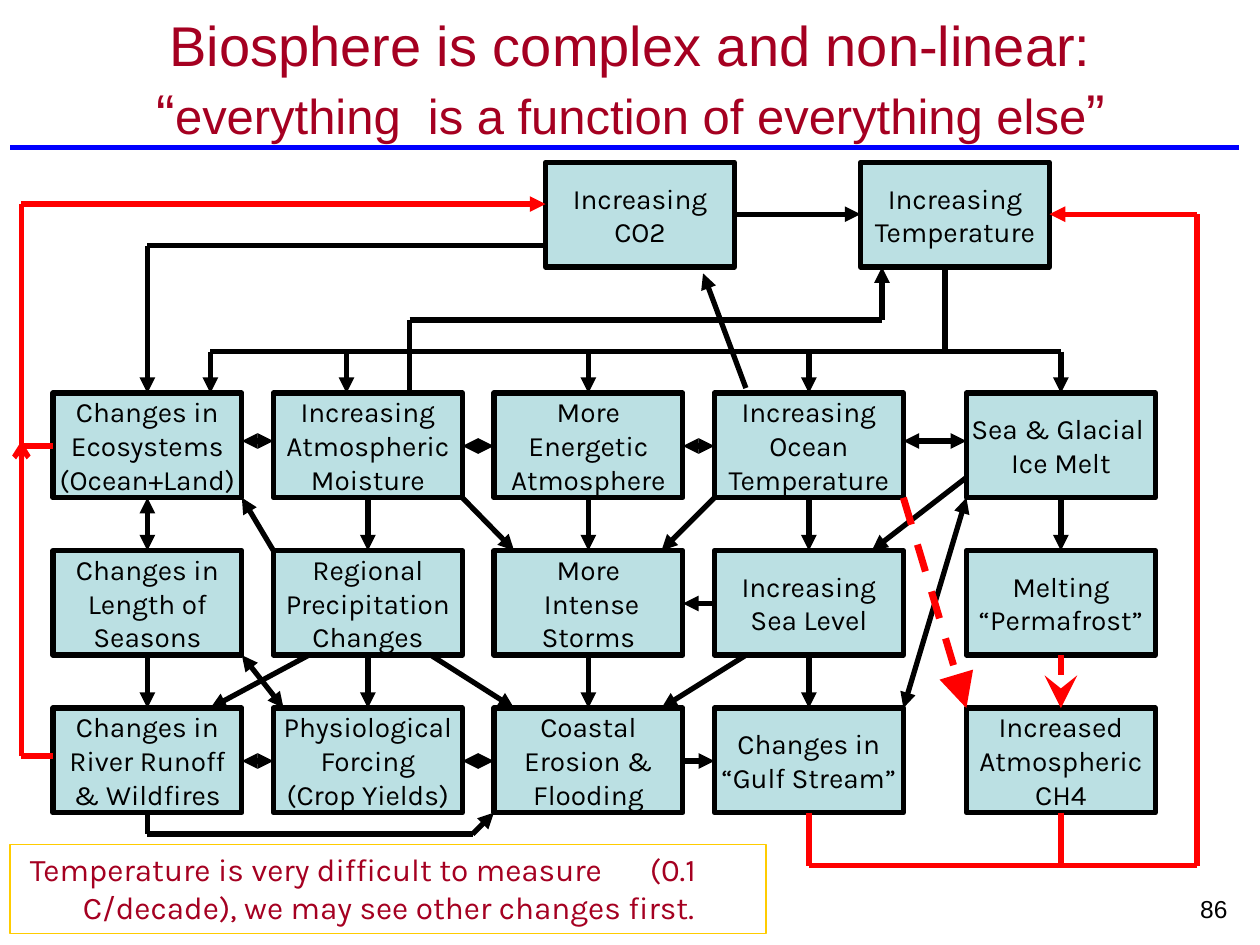
"""Build a slide mapping the feedbacks between parts of the biosphere."""
from dataclasses import dataclass

from lxml import etree
from pptx import Presentation
from pptx.dml.color import RGBColor
from pptx.enum.dml import MSO_LINE
from pptx.enum.shapes import MSO_CONNECTOR, MSO_SHAPE
from pptx.enum.text import MSO_ANCHOR, MSO_AUTO_SIZE, PP_ALIGN
from pptx.oxml.ns import qn
from pptx.util import Inches, Pt

STRAIGHT = MSO_CONNECTOR.STRAIGHT
RECTANGLE = MSO_SHAPE.RECTANGLE
MIDDLE, TOP = MSO_ANCHOR.MIDDLE, MSO_ANCHOR.TOP
CENTER, LEFT, RIGHT = PP_ALIGN.CENTER, PP_ALIGN.LEFT, PP_ALIGN.RIGHT
NO_AUTOFIT = MSO_AUTO_SIZE.NONE
DASH, SHORT_DASH = MSO_LINE.DASH, MSO_LINE.SQUARE_DOT


@dataclass(frozen=True)
class Theme:
    black: RGBColor = RGBColor.from_string("000000")
    red: RGBColor = RGBColor.from_string("FF0000")
    blue: RGBColor = RGBColor.from_string("0000FF")
    crimson: RGBColor = RGBColor.from_string("A50021")
    gold: RGBColor = RGBColor.from_string("FFCC00")
    box: RGBColor = RGBColor.from_string("BBE0E3")
    heading_font: str = "Arial"
    body_font: str = "Karla"
    title: Pt = Pt(32)
    subtitle: Pt = Pt(28)
    note: Pt = Pt(18)
    label: Pt = Pt(16)
    number: Pt = Pt(14)


THEME = Theme()


def style_text(paragraph, font_name, size, color, align):
    paragraph.alignment = align
    for run in paragraph.runs:
        run.font.name = font_name
        run.font.size = size
        run.font.color.rgb = color


def route(points, color=THEME.black, head=None, tail="triangle",
          width=3, dash=None, tip="med"):
    legs = list(zip(points, points[1:]))
    for index, (start, end) in enumerate(legs):
        leg = slide.shapes.add_connector(
            STRAIGHT, *(Inches(value) for value in start + end))
        leg.line.color.rgb = color
        leg.line.width = Pt(width)
        if dash is not None:
            leg.line.dash_style = dash
        outline = leg.line._get_or_add_ln()
        ends = (("a:headEnd", head if index == 0 else None),
                ("a:tailEnd", tail if index == len(legs) - 1 else None))
        for tag, kind in ends:
            if kind:
                etree.SubElement(outline, qn(tag), type=kind, w=tip, len=tip)
        etree.SubElement(leg._element.spPr, qn("a:effectLst"))


prs = Presentation()
prs.slide_width, prs.slide_height = Inches(10), Inches(7.5)
slide = prs.slides.add_slide(prs.slide_layouts[5])

title = slide.shapes.title
title.left, title.top = Inches(0.67), Inches(0.15)
title.width, title.height = Inches(8.67), Inches(0.94)
title.text_frame.auto_size = NO_AUTOFIT
title.text_frame.vertical_anchor = MIDDLE
heading = title.text_frame.paragraphs[0]
heading.text = "Biosphere is complex and non-linear:\v“"
motto = heading.add_run()
motto.text = "everything  is a function of everything else"
heading.add_run().text = "”"
style_text(heading, THEME.heading_font, THEME.title, THEME.crimson, CENTER)
motto.font.size = THEME.subtitle

route([(0.08, 1.17), (9.83, 1.17)], THEME.blue, tail=None)

BOX_WIDTH, BOX_HEIGHT = 1.5, 0.83
COLUMNS = [0.42, 2.17, 3.92, 5.67, 7.67]
CENTERS = [left + BOX_WIDTH / 2 for left in COLUMNS]
RIGHTS = [left + BOX_WIDTH for left in COLUMNS]
ROWS = [3.12, 4.37, 5.62]
BOTTOMS = [top + BOX_HEIGHT for top in ROWS]

GRID = [
    ["Changes in\nEcosystems\n(Ocean+Land)", "Increasing\nAtmospheric\nMoisture",
     "More\nEnergetic\nAtmosphere", "Increasing\nOcean\nTemperature",
     "Sea & Glacial \nIce Melt"],
    ["Changes in\nLength of\nSeasons", "Regional\nPrecipitation\nChanges",
     "More\n Intense\nStorms", "Increasing\nSea Level", "Melting\n“Permafrost”"],
    ["Changes in\nRiver Runoff\n& Wildfires", "Physiological\nForcing\n(Crop Yields)",
     "Coastal\nErosion &\nFlooding", "Changes in\n“Gulf Stream”",
     "Increased\nAtmospheric\nCH4"],
]
factors = [("Increasing\nCO2", 4.33, 1.29), ("Increasing\nTemperature", 6.83, 1.29)]
for top, labels in zip(ROWS, GRID):
    factors += [(label, left, top) for label, left in zip(labels, COLUMNS)]

for label, left, top in factors:
    factor = slide.shapes.add_shape(RECTANGLE, Inches(left), Inches(top),
                                    Inches(BOX_WIDTH), Inches(BOX_HEIGHT))
    factor.shadow.inherit = False
    factor.fill.solid()
    factor.fill.fore_color.rgb = THEME.box
    factor.line.color.rgb = THEME.black
    factor.line.width = Pt(3)
    factor.text_frame.text = label
    factor.text_frame.word_wrap = False
    factor.text_frame.vertical_anchor = MIDDLE
    for paragraph in factor.text_frame.paragraphs:
        style_text(paragraph, THEME.body_font, THEME.label, THEME.black, CENTER)

BUS = 2.79
route([(1.67, BUS), (CENTERS[4], BUS)], tail=None)
route([(7.5, 2.12), (7.5, BUS)], tail=None)
for x in [1.67, 2.75] + CENTERS[2:]:
    route([(x, BUS), (x, ROWS[0])])

for column, x in enumerate(CENTERS):
    route([(x, BOTTOMS[0]), (x, ROWS[1])], head=None if column else "triangle")
for x in CENTERS[:4]:
    route([(x, BOTTOMS[1]), (x, ROWS[2])])

for column, y in [(0, 3.5), (1, 3.54), (2, 3.54), (3, 3.5), (0, 6.04), (1, 6.04)]:
    route([(RIGHTS[column], y), (COLUMNS[column + 1], y)], head="triangle")

one_way = [
    [(5.83, 1.7), (6.83, 1.7)],
    [(5.42, 6.04), (5.67, 6.04)],
    [(5.67, 4.79), (5.42, 4.79)],
    [(7.67, 3.79), (6.92, 4.37)],
    [(5.92, 5.2), (5.25, 5.62)],
    [(3.42, 5.2), (4.08, 5.62)],
    [(2.45, 5.2), (1.67, 5.62)],
    [(2.17, 4.37), (1.92, 3.95)],
    [(5.67, 3.95), (5.25, 4.37)],
    [(3.67, 3.95), (4.08, 4.37)],
    [(5.92, 3.08), (5.58, 2.17)],
    [(4.33, 1.95), (1.17, 1.95), (1.17, 3.12)],
    [(3.25, 3.12), (3.25, 2.54), (7, 2.54), (7, 2.12)],
    [(1.17, 6.45), (1.17, 6.62), (3.75, 6.62), (3.92, 6.45)],
]
for points in one_way:
    route(points)
for points in [[(7.67, 3.95), (7.17, 5.62)], [(1.92, 5.2), (2.25, 5.62)]]:
    route(points, head="triangle")

route([(0.42, 3.54), (0.17, 3.54), (0.17, 1.62), (4.33, 1.62)], THEME.red)
route([(0.42, 6), (0.17, 6), (0.17, 3.5)], THEME.red, tail="arrow")
route([(6.42, 6.45), (6.42, 6.87), (9.5, 6.87), (9.5, 1.7), (8.33, 1.7)], THEME.red)
route([(8.42, 6.45), (8.42, 6.87)], THEME.red, tail=None)
route([(8.42, 5.2), (8.42, 5.62)], THEME.red, tail="stealth",
      width=3.75, dash=SHORT_DASH, tip="lg")
route([(7.17, 3.95), (7.67, 5.62)], THEME.red, width=4, dash=DASH, tip="lg")

note = slide.shapes.add_shape(RECTANGLE, Inches(0.08), Inches(6.7),
                              Inches(6), Inches(0.71))
note.shadow.inherit = False
note.fill.background()
note.line.color.rgb = THEME.gold
note.line.width = Pt(0.75)
note.text_frame.word_wrap = True
note.text_frame.vertical_anchor = TOP
remark = note.text_frame.paragraphs[0]
remark.text = ("Temperature is very difficult to measure\t(0.1 C/decade), "
               "we may see other changes first.")
remark_format = remark._p.get_or_add_pPr()
remark_format.set("marL", str(Inches(0.48)))
remark_format.set("indent", str(Inches(-0.42)))
tabs = etree.SubElement(remark_format, qn("a:tabLst"))
etree.SubElement(tabs, qn("a:tab"), pos=str(Inches(5.38)), algn="l")
style_text(remark, THEME.body_font, THEME.note, THEME.crimson, LEFT)

number = slide.shapes.add_textbox(Inches(9.17), Inches(7.08), Inches(0.67), Inches(0.27))
number.text_frame.word_wrap = True
number.text_frame.vertical_anchor = MIDDLE
number.text_frame.text = "86"
style_text(number.text_frame.paragraphs[0], THEME.heading_font, THEME.number,
           THEME.black, RIGHT)

prs.save("out.pptx")
